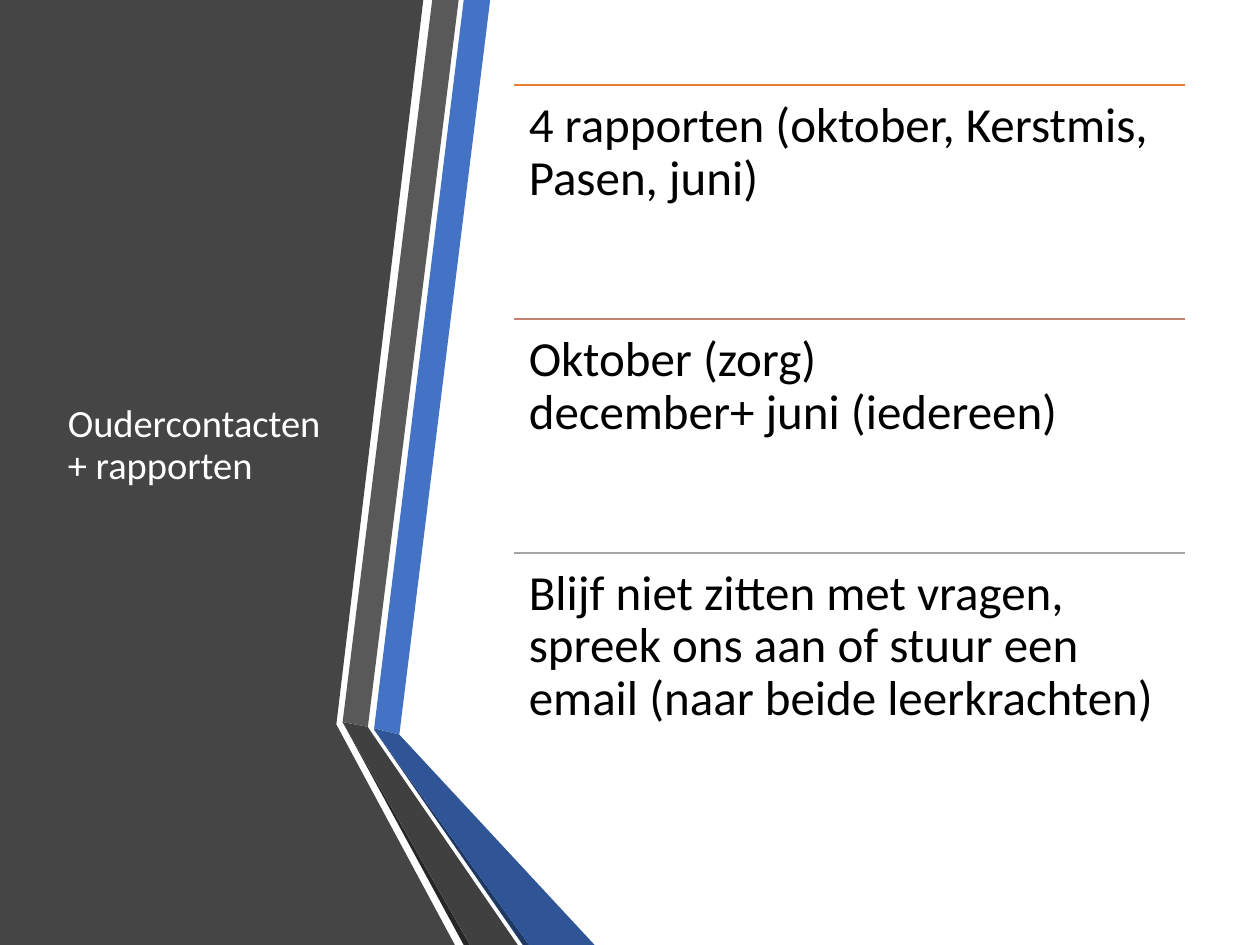
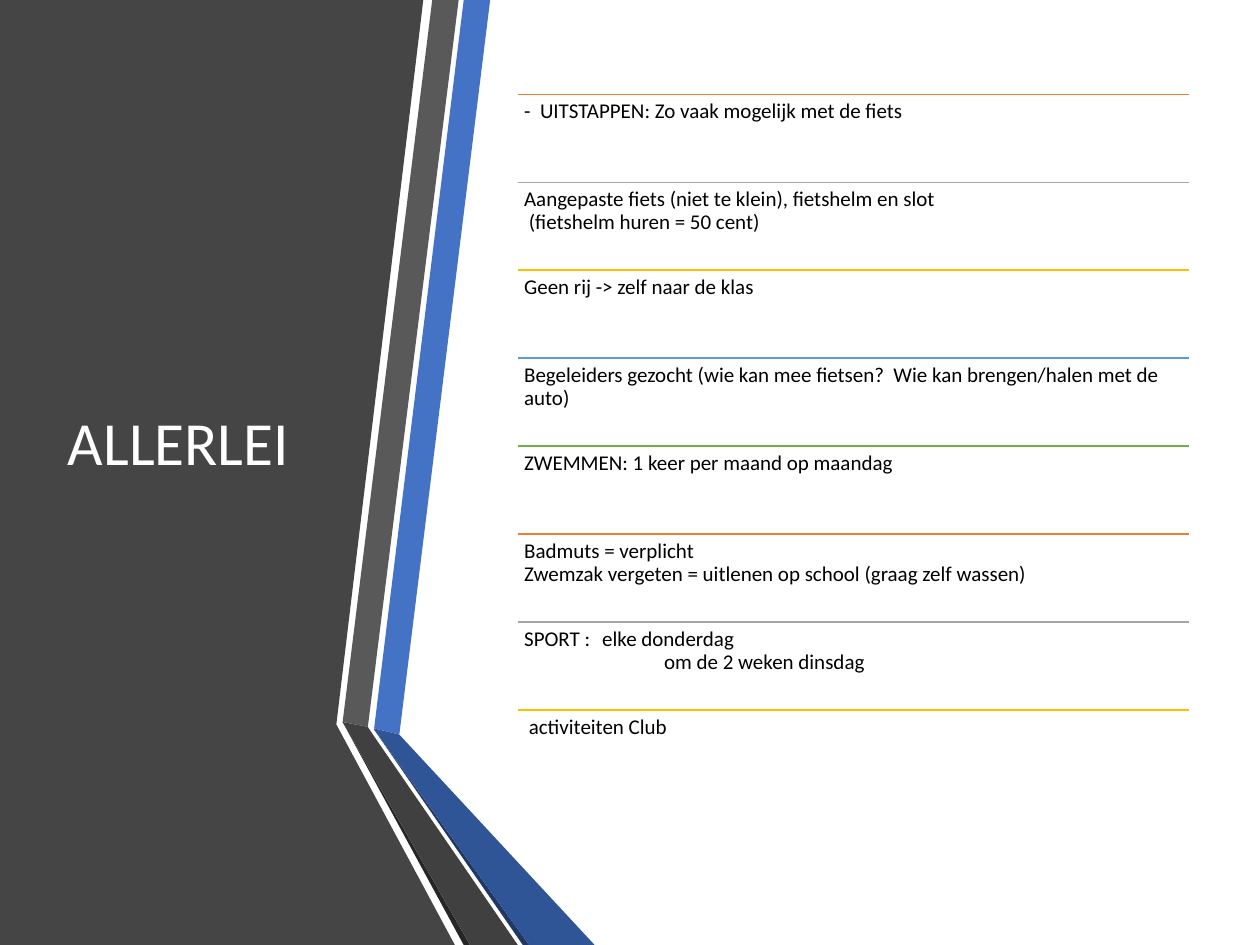
from lxml import etree
from pptx import Presentation
from pptx.dml.color import RGBColor
from pptx.enum import shapes, text
from pptx.oxml import ns
from pptx.util import Pt

W, H = 720, 540
ORANGE, GREY, GOLD, BLUE, GREEN = "ED7D31", "A5A5A5", "FFC000", "5B9BD5", "70AD47"
ROSE, WHITE, BLACK = "C48170", "FFFFFF", "000000"

BANDS = [
    ("454545", [(0, 0), (241.9, 0), (192.2, 414), (259.9, H), (0, H)]),
    ("4472C4", [(213.8, 416.2), (228.2, 419.8), (280.1, 0), (265, 0)]),
    ("595959", [(262.1, 0), (247, 0), (195.8, 412.6), (210.2, 415.4)]),
    ("262626", [(195.8, 412.6), (265, H), (268.6, H)]),
    ("203864", [(213.8, 416.9), (298.8, H), (302.4, H)]),
    ("2F5597", [(213.8, 416.9), (302.4, H), (339.8, H), (228.2, 419.8), (213.8, 416.2)]),
    ("404040", [(295.9, H), (213.1, 419.8), (210.2, 415.4), (195.8, 412.6), (268.6, H)]),
]

SLIDES = [
    {
        "title": "Oudercontacten + rapporten", "title_size": 22,
        "left": 293.8, "top": 48.7, "step": 133.65, "inset": 8.4, "size": 28,
        "items": [
            (ORANGE, "4 rapporten (oktober, Kerstmis, Pasen, juni)"),
            (ROSE, "Oktober (zorg)\vdecember+ juni (iedereen)"),
            (GREY, "Blijf niet zitten met vragen, spreek ons aan of stuur een email (naar beide leerkrachten)"),
        ],
    },
    {
        "title": "ALLERLEI", "title_size": 35,
        "left": 295.9, "top": 54, "step": 50.25, "inset": 3.6, "size": 12,
        "items": [
            (ORANGE, "-  UITSTAPPEN: Zo vaak mogelijk met de fiets"),
            (GREY, "Aangepaste fiets (niet te klein), fietshelm en slot\v (fietshelm huren = 50 cent)"),
            (GOLD, "Geen rij -> zelf naar de klas"),
            (BLUE, "Begeleiders gezocht (wie kan mee fietsen?  Wie kan brengen/halen met de auto)"),
            (GREEN, "ZWEMMEN: 1 keer per maand op maandag"),
            (ORANGE, "Badmuts = verplicht\vZwemzak vergeten = uitlenen op school (graag zelf wassen)"),
            (GREY, "SPORT :\telke donderdag\nom de 2 weken dinsdag"),
            (GOLD, " activiteiten Club"),
        ],
    },
]


def rgb(value):
    return RGBColor.from_string(value)


def add_text(s, box, words, size, color, frame):
    sp = s.shapes.add_textbox(*map(Pt, box))
    tf = sp.text_frame
    for name, value in frame.items():
        setattr(tf, name, value)
    tf.text = words
    for p in tf.paragraphs:
        p.line_spacing = 0.9
        for r in p.runs:
            for name, value in {"name": "Calibri", "size": Pt(size)}.items():
                setattr(r.font, name, value)
            r.font.color.rgb = rgb(color)
    return tf


prs = Presentation()
prs.slide_width, prs.slide_height = Pt(W), Pt(H)

for content in SLIDES:
    s = prs.slides.add_slide(prs.slide_layouts[6])

    for color, points in BANDS:
        corners = [(Pt(x), Pt(y)) for x, y in points]
        fb = s.shapes.build_freeform(*corners[0])
        fb.add_line_segments(corners[1:], close=True)
        sp = fb.convert_to_shape()
        sp.shadow.inherit = False
        sp.fill.solid()
        sp.fill.fore_color.rgb = rgb(color)
        sp.line.fill.background()

    add_text(s, (31.7, 54, 164.2, 401.8), content["title"], content["title_size"], WHITE,
             {"word_wrap": True, "vertical_anchor": text.MSO_ANCHOR.MIDDLE})

    left, width, step = content["left"], 383.6, content["step"]
    sides = ("margin_left", "margin_top", "margin_right", "margin_bottom")
    frame = {"word_wrap": True, **dict.fromkeys(sides, Pt(content["inset"]))}
    for i, (color, words) in enumerate(content["items"]):
        y = content["top"] + i * step
        line = s.shapes.add_connector(shapes.MSO_CONNECTOR.STRAIGHT,
                                      Pt(left), Pt(y), Pt(left + width), Pt(y))
        line.line.color.rgb = rgb(color)
        line.line.width = Pt(1)
        etree.SubElement(line._element.spPr, ns.qn("a:effectLst"))

        tf = add_text(s, (left, y, width, step), words, content["size"], BLACK, frame)
        if "\t" in words:
            first, second = (p._p.get_or_add_pPr() for p in tf.paragraphs)
            tabs = etree.SubElement(first, ns.qn("a:tabLst"))
            etree.SubElement(tabs, ns.qn("a:tab"), pos=str(Pt(44.6)), algn="l")
            second.set("marL", str(Pt(80)))
            second.set("indent", "0")

prs.save("out.pptx")
